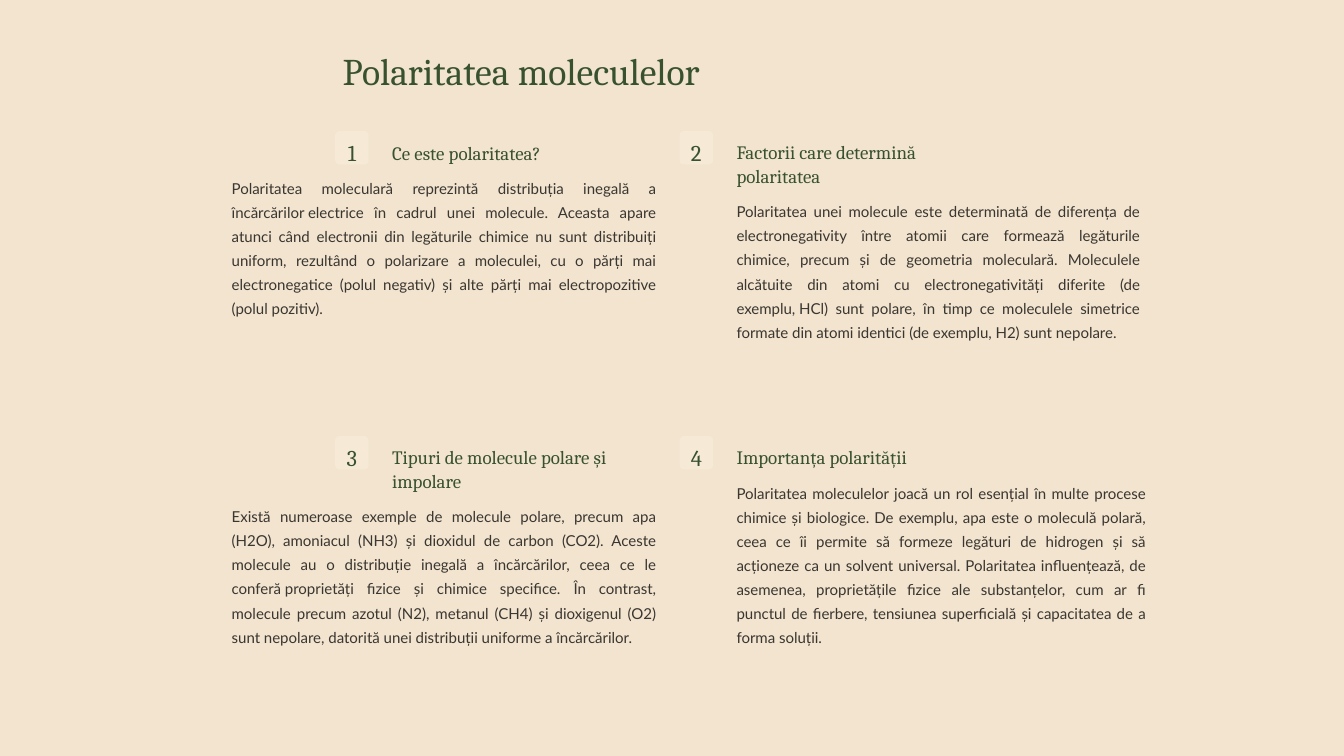
from dataclasses import dataclass

import pptx
import pptx.dml.color
import pptx.enum.shapes
import pptx.enum.text
import pptx.util

Inches, Pt = pptx.util.Inches, pptx.util.Pt
ALIGN = pptx.enum.text.PP_ALIGN
SHAPE = pptx.enum.shapes.MSO_SHAPE

COLORS = {"page": "F2E4CF", "badge": "F6E9D5", "green": "38512F", "ink": "3A3630"}
NO_BREAK_SPACE = chr(160)

# Grid, in inches
SLIDE_W, SLIDE_H = 16, 9
ROWS = (1.56, 5.19)
BADGE = 0.4
NUMBER_W = 0.14
HEADING_LINE = 0.28


@dataclass
class Style:
    font: dict
    paragraph: dict
    color: str


@dataclass
class Column:
    badge: float
    heading: float
    body: float


@dataclass
class Topic:
    heading: str
    heading_lines: int
    body: str
    body_w: float
    body_h: float = 2.59
    tied: str = ""  # words of the body kept on one line


COLUMNS = (Column(3.99, 4.57, 2.66), Column(8.09, 8.67, 8.67))


def style(font: str, size: float, line: float, align: ALIGN, color: str) -> Style:
    return Style({"name": font, "size": Pt(size)},
                 {"line_spacing": Pt(line), "alignment": align}, color)


STYLES = {
    "title": style("Cambria", 32.3, 40.4, ALIGN.LEFT, "green"),
    "number": style("Cambria", 19.4, 24.2, ALIGN.CENTER, "green"),
    "heading": style("Cambria", 16.2, 20.2, ALIGN.LEFT, "green"),
    "body": style("Lato", 12.9, 20.7, ALIGN.JUSTIFY, "ink"),
}

TOPICS = (
    Topic("Ce este polaritatea?", 1,
          "Polaritatea moleculară reprezintă distribuția inegală a încărcărilor electrice "
          "în cadrul unei molecule. Aceasta apare atunci când electronii din legăturile "
          "chimice nu sunt distribuiți uniform, rezultând o polarizare a moleculei, cu o "
          "părți mai electronegatice (polul negativ) și alte părți mai electropozitive "
          "(polul pozitiv).", 5.25, 2.3, tied="încărcărilor electrice"),
    Topic("Factorii care determină polaritatea", 2,
          "Polaritatea unei molecule este determinată de diferența de electronegativity "
          "între atomii care formează legăturile chimice, precum și de geometria "
          "moleculară. Moleculele alcătuite din atomi cu electronegativități diferite (de "
          "exemplu, HCl) sunt polare, în timp ce moleculele simetrice formate din atomi "
          "identici (de exemplu, H2) sunt nepolare.", 5, tied="exemplu, HCl)"),
    Topic("Tipuri de molecule polare și impolare", 2,
          "Există numeroase exemple de molecule polare, precum apa (H2O), amoniacul (NH3) "
          "și dioxidul de carbon (CO2). Aceste molecule au o distribuție inegală a "
          "încărcărilor, ceea ce le conferă proprietăți fizice și chimice specifice. În "
          "contrast, molecule precum azotul (N2), metanul (CH4) și dioxigenul (O2) sunt "
          "nepolare, datorită unei distribuții uniforme a încărcărilor.", 5.25,
          tied="conferă proprietăți"),
    Topic("Importanța polarității", 1,
          "Polaritatea moleculelor joacă un rol esențial în multe procese chimice și "
          "biologice. De exemplu, apa este o moleculă polară, ceea ce îi permite să "
          "formeze legături de hidrogen și să acționeze ca un solvent universal. "
          "Polaritatea influențează, de asemenea, proprietățile fizice ale substanțelor, "
          "cum ar fi punctul de fierbere, tensiunea superficială și capacitatea de a "
          "forma soluții.", 5.07),
)


def rgb(name: str) -> pptx.dml.color.RGBColor:
    return pptx.dml.color.RGBColor.from_string(COLORS[name])


def write(sp, text: str, name: str, wrap: bool) -> None:
    st = STYLES[name]
    tf = sp.text_frame
    frame = {"word_wrap": wrap, "auto_size": pptx.enum.text.MSO_AUTO_SIZE.NONE,
             "vertical_anchor": pptx.enum.text.MSO_ANCHOR.TOP}
    p = tf.paragraphs[0]
    r = p.add_run()
    r.text = text
    for target, values in ((tf, frame), (p, st.paragraph), (r.font, st.font)):
        for key, value in values.items():
            setattr(target, key, value)
    r.font.color.rgb = rgb(st.color)


def add_text(slide, x: float, y: float, w: float, h: float,
             text: str, name: str, wrap: bool = True) -> None:
    sp = slide.shapes.add_textbox(Inches(x), Inches(y), Inches(w), Inches(h))
    write(sp, text, name, wrap)


def add_panel(slide, kind: SHAPE, x: float, y: float, w: float, h: float, color: str):
    sp = slide.shapes.add_shape(kind, Inches(x), Inches(y), Inches(w), Inches(h))
    sp.shadow.inherit = False
    sp.fill.solid()
    sp.fill.fore_color.rgb = rgb(color)
    sp.line.fill.background()
    return sp


def add_topic(slide, index: int, topic: Topic) -> None:
    row, col = divmod(index, len(COLUMNS))
    top, column = ROWS[row], COLUMNS[col]
    single = topic.heading_lines == 1

    # Numbered badge
    badge = add_panel(slide, SHAPE.ROUNDED_RECTANGLE, column.badge, top, BADGE, BADGE, "badge")
    badge.adjustments[0] = 0.13
    add_text(slide, column.badge + (BADGE - NUMBER_W) / 2, top + 0.03, NUMBER_W, 0.34,
             str(index + 1), "number", wrap=False)

    # Heading, with the body below its last line
    heading_h = HEADING_LINE * topic.heading_lines
    add_text(slide, column.heading, top + 0.06, 2.25 if single else 3.34, heading_h,
             topic.heading, "heading", wrap=not single)
    body = topic.body
    if topic.tied:
        body = body.replace(topic.tied, topic.tied.replace(" ", NO_BREAK_SPACE))
    add_text(slide, column.body, top + 0.17 + heading_h, topic.body_w, topic.body_h,
             body, "body")


def main() -> None:
    prs = pptx.Presentation()
    prs.slide_width, prs.slide_height = Inches(SLIDE_W), Inches(SLIDE_H)
    slide = prs.slides.add_slide(prs.slide_layouts.get_by_name("Title Only"))

    # Title over the full-page panel
    title = slide.shapes.title
    place = {"left": 3.98, "top": 0.5, "width": 4.86, "height": 0.56}
    for key, value in place.items():
        setattr(title, key, Inches(value))
    write(title, "Polaritatea moleculelor", "title", wrap=False)
    page = add_panel(slide, SHAPE.RECTANGLE, 0, 0, SLIDE_W, SLIDE_H, "page")
    title.element.addprevious(page.element)

    # Four topics
    for index, topic in enumerate(TOPICS):
        add_topic(slide, index, topic)

    prs.save("out.pptx")


if __name__ == "__main__":
    main()
